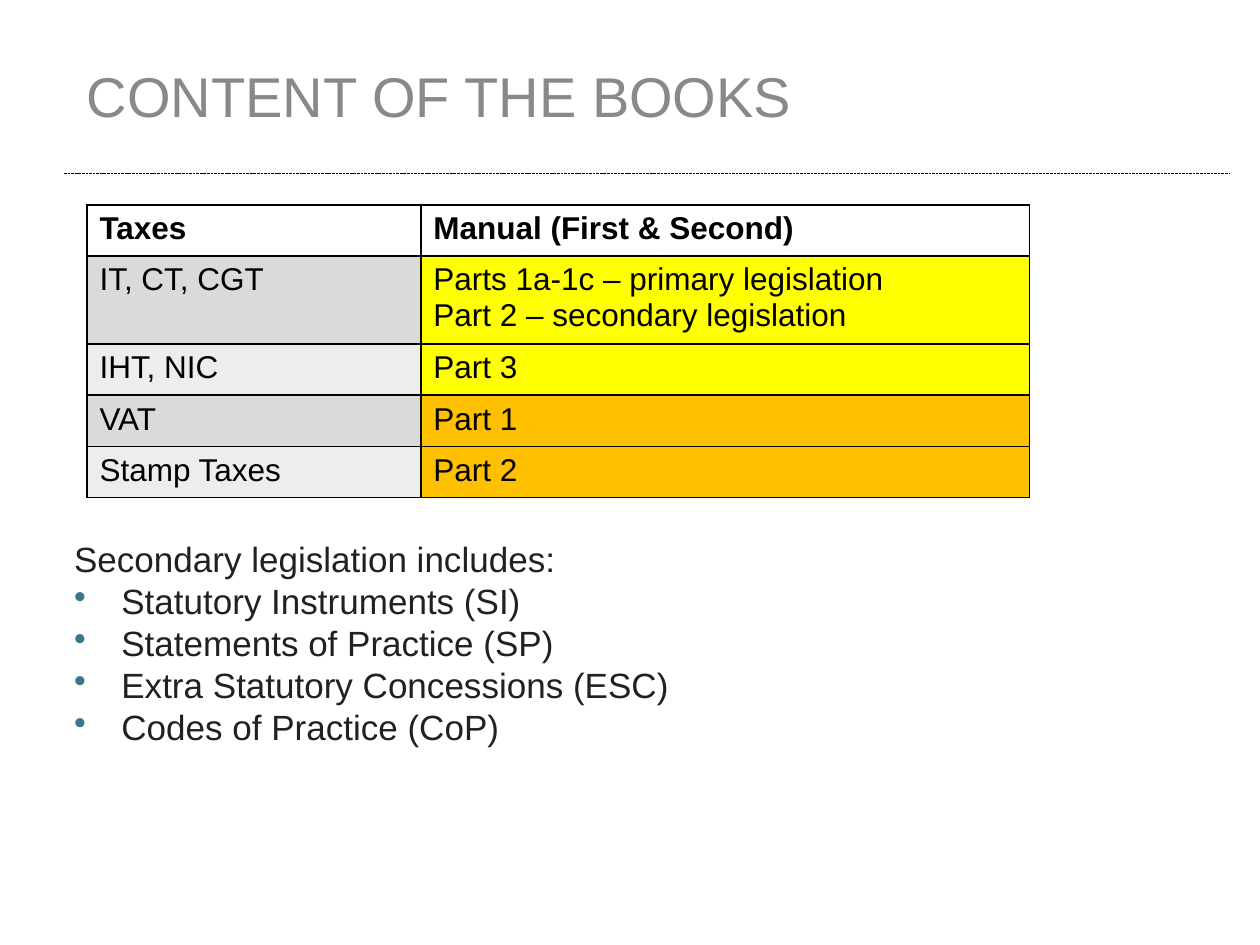
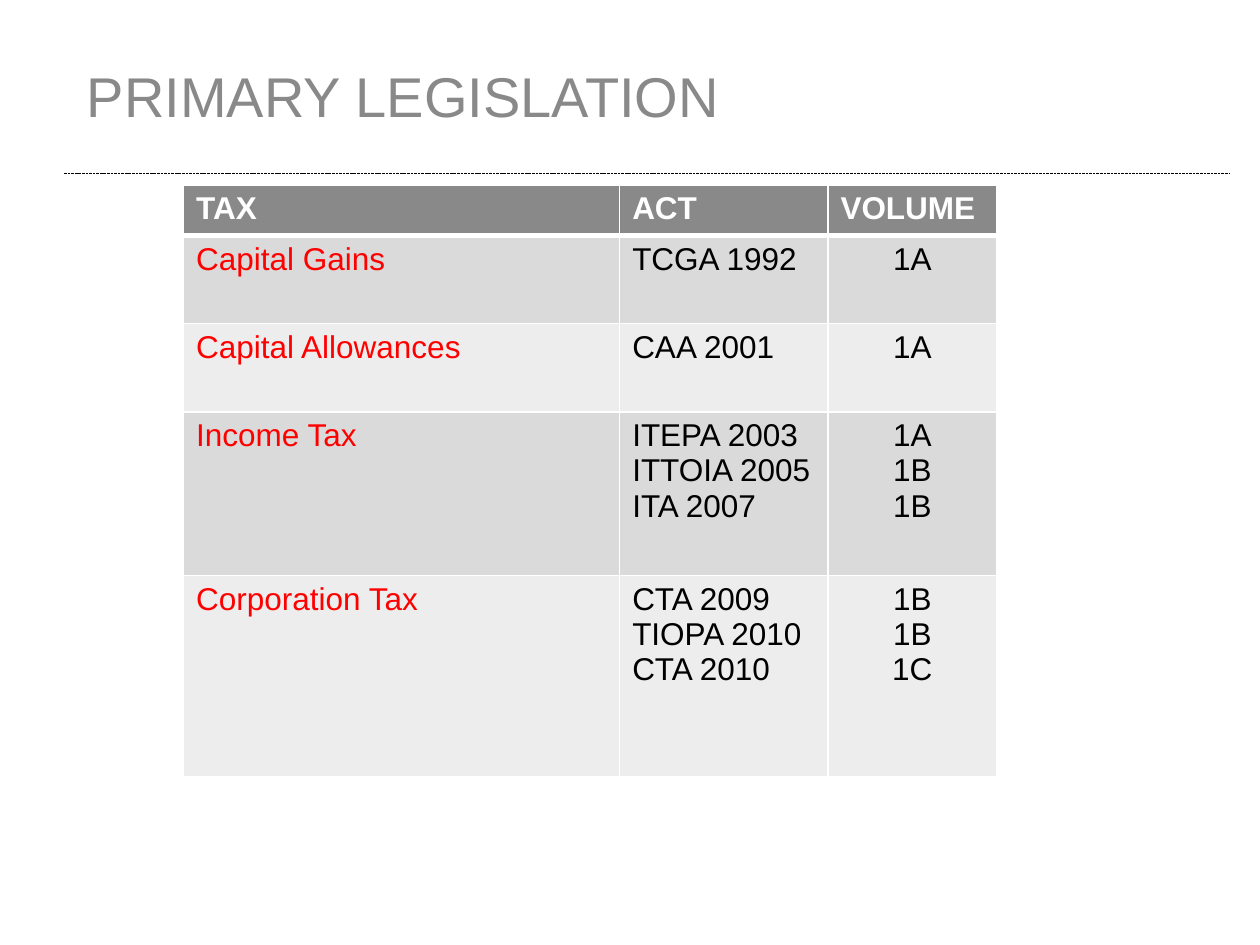
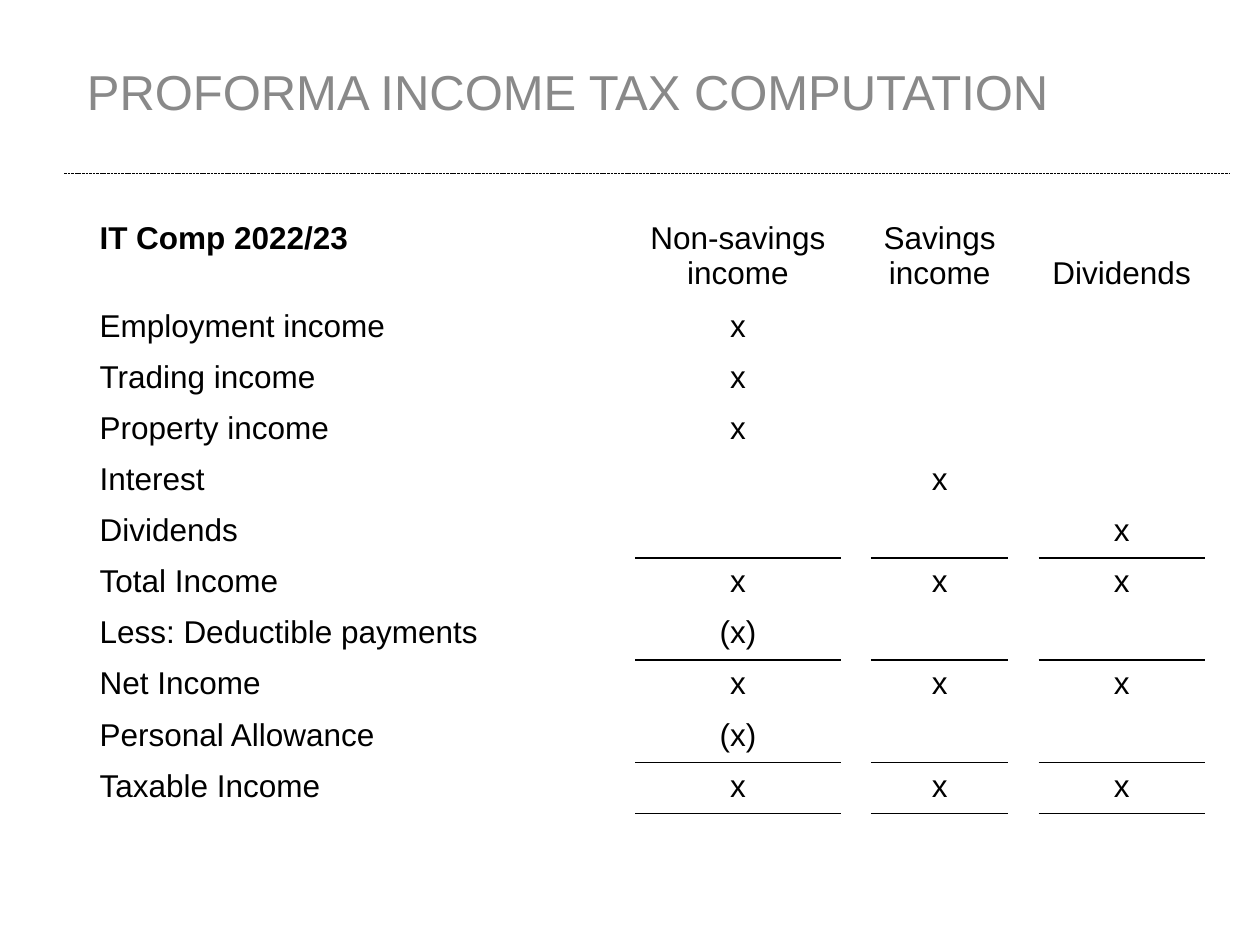
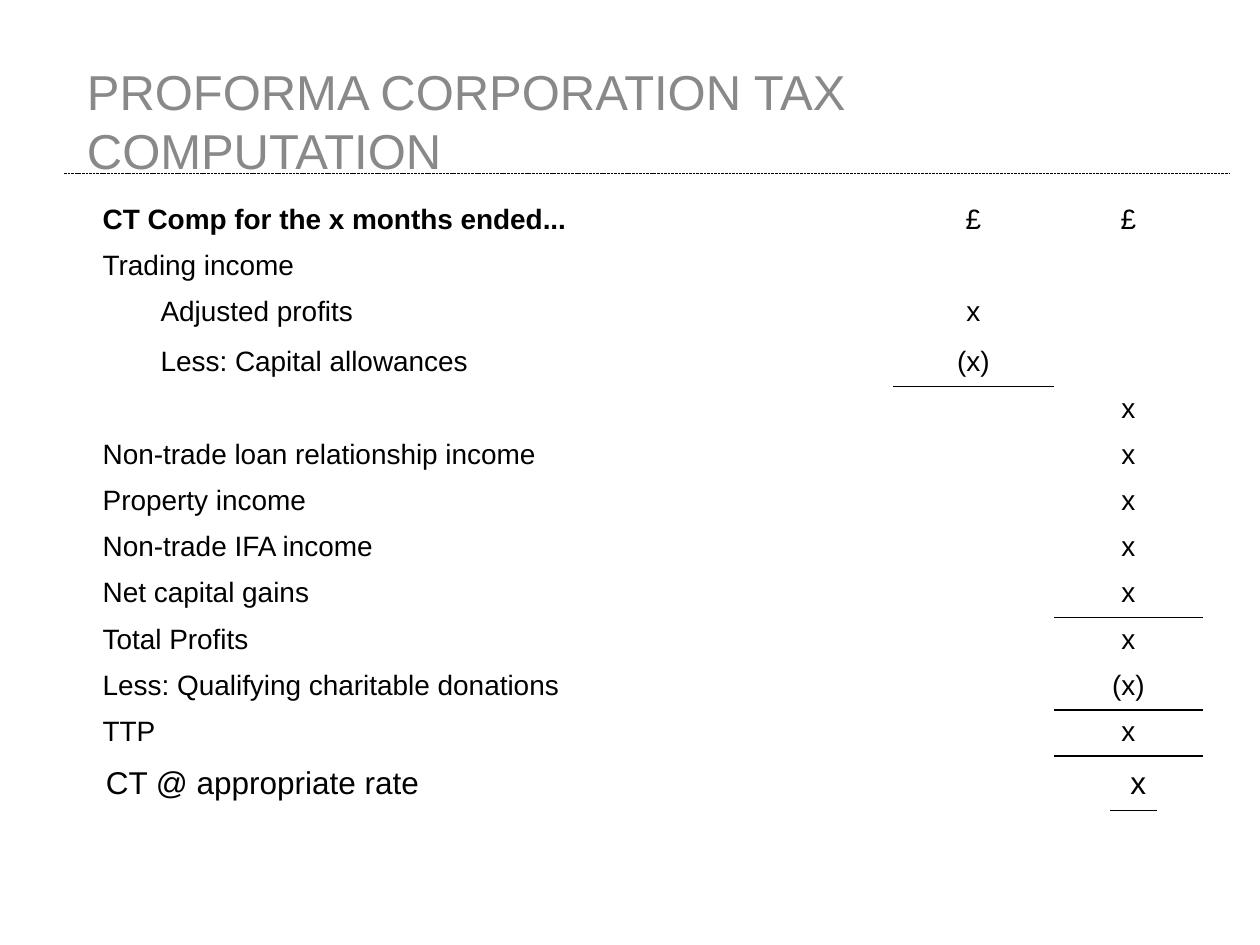
"""Build four slides on tax legislation and proforma tax computations."""
import dataclasses

import lxml.etree
import pptx
import pptx.dml.color
import pptx.enum.dml
import pptx.enum.shapes
import pptx.enum.text
import pptx.oxml.ns
import pptx.util

Pt = pptx.util.Pt
CENTER = pptx.enum.text.PP_ALIGN.CENTER
BOTTOM = pptx.enum.text.MSO_ANCHOR.BOTTOM
PLAIN_TABLE = "{2D5ABB26-0587-4C30-8999-92F81FD0307C}"


@dataclasses.dataclass(frozen=True)
class Theme:
    font: str = "Arial"
    black: str = "000000"
    white: str = "FFFFFF"
    gray: str = "898989"
    bands: tuple = ("EDEDED", "DADADA")
    yellow: str = "FFFF00"
    orange: str = "FFC000"
    red: str = "FF0000"
    ink: str = "202124"
    bullet: str = "3A7689"
    title: int = 32
    long_title: int = 28
    body: int = 20
    table: int = 18
    small_table: int = 16


THEME = Theme()

BOOKS = [
    ("Taxes", "Manual (First & Second)"),
    ("IT, CT, CGT", "Parts 1a-1c – primary legislation\nPart 2 – secondary legislation"),
    ("IHT, NIC", "Part 3"),
    ("VAT", "Part 1"),
    ("Stamp Taxes", "Part 2"),
]
SECONDARY = [
    "Secondary legislation includes:",
    "Statutory Instruments (SI)",
    "Statements of Practice (SP)",
    "Extra Statutory Concessions (ESC)",
    "Codes of Practice (CoP)",
]
ACTS = [
    ("TAX", "ACT", "VOLUME"),
    ("Capital Gains", "TCGA 1992", "1A"),
    ("Capital Allowances", "CAA 2001", "1A"),
    ("Income Tax", "ITEPA 2003\nITTOIA 2005\nITA 2007", "1A\n1B\n1B"),
    ("Corporation Tax", "CTA 2009\nTIOPA 2010\nCTA 2010", "1B\n1B\n1C"),
]
INCOME_TAX = [
    ("IT Comp 2022/23", "Non-savings income", "", "Savings income", "", "Dividends"),
    ("Employment income", "x", "", "", "", ""),
    ("Trading income", "x", "", "", "", ""),
    ("Property income", "x", "", "", "", ""),
    ("Interest", "", "", "x", "", ""),
    ("Dividends", "", "", "", "", "x"),
    ("Total Income", "x", "", "x", "", "x"),
    ("Less: Deductible payments", "(x)", "", "", "", ""),
    ("Net Income", "x", "", "x", "", "x"),
    ("Personal Allowance", "(x)", "", "", "", ""),
    ("Taxable Income", "x", "", "x", "", "x"),
]
INCOME_TAX_RULES = {(row, column) for row in (5, 7, 9, 10) for column in (1, 3, 5)}
CORPORATION_TAX = [
    ("CT Comp for the x months ended...", "", "£", "£"),
    ("Trading income", "", "", ""),
    ("", "Adjusted profits", "x", ""),
    ("", "Less: Capital allowances", "(x)", ""),
    ("", "", "", "x"),
    ("Non-trade loan relationship income", "", "", "x"),
    ("Property income", "", "", "x"),
    ("Non-trade IFA income", "", "", "x"),
    ("Net capital gains", "", "", "x"),
    ("Total Profits", "", "", "x"),
    ("Less: Qualifying charitable donations", "", "", "(x)"),
    ("TTP", "", "", "x"),
]
CORPORATION_TAX_RULES = {(3, 2), (8, 3), (10, 3), (11, 3)}
CHARGE = [("CT @ appropriate rate", "x")]


def rgb(color):
    return pptx.dml.color.RGBColor.from_string(color)


def add_bullet(para):
    properties = para._p.get_or_add_pPr()
    properties.set("marL", str(Pt(27)))
    properties.set("indent", str(-Pt(27)))
    color = lxml.etree.SubElement(properties, pptx.oxml.ns.qn("a:buClr"))
    lxml.etree.SubElement(color, pptx.oxml.ns.qn("a:srgbClr"), val=THEME.bullet)
    lxml.etree.SubElement(properties, pptx.oxml.ns.qn("a:buChar"), char="•")


def write(frame, text, size=THEME.table, color=THEME.black, bold=False, align=None,
          bullets_from=None):
    for index, line in enumerate(text.split("\n")):
        para = frame.paragraphs[0] if index == 0 else frame.add_paragraph()
        if bullets_from is not None and index >= bullets_from:
            add_bullet(para)
        if align is not None:
            para.alignment = align
        span = para.add_run()
        span.text = line
        span.font.name = THEME.font
        span.font.size = Pt(size)
        span.font.bold = bold
        span.font.color.rgb = rgb(color)


def set_insets(target, side, upright):
    target.margin_left = target.margin_right = Pt(side)
    target.margin_top = target.margin_bottom = Pt(upright)


def add_page(deck, title, size=THEME.title):
    page = deck.slides.add_slide(deck.slide_layouts[5])
    rule = page.shapes.add_connector(
        pptx.enum.shapes.MSO_CONNECTOR.STRAIGHT, Pt(36.7), Pt(99.4), Pt(702.7), Pt(99.4))
    rule.line.color.rgb = rgb(THEME.black)
    rule.line.width = Pt(0.5)
    rule.line.dash_style = pptx.enum.dml.MSO_LINE.SQUARE_DOT
    lxml.etree.SubElement(rule._element.spPr, pptx.oxml.ns.qn("a:effectLst"))
    box = page.shapes.title
    box.left, box.top, box.width, box.height = Pt(49.7), Pt(35.3), Pt(638), Pt(63)
    frame = box.text_frame
    set_insets(frame, 0, 0)
    frame.word_wrap = True
    frame.auto_size = pptx.enum.text.MSO_AUTO_SIZE.NONE
    frame.vertical_anchor = pptx.enum.text.MSO_ANCHOR.TOP
    write(frame, title, size=size, color=THEME.gray, align=pptx.enum.text.PP_ALIGN.LEFT)
    return page


def set_edges(cell, edges):
    properties = cell._tc.get_or_add_tcPr()
    for side in "LRTB":
        line = lxml.etree.SubElement(properties, pptx.oxml.ns.qn("a:ln" + side))
        if side in edges:
            color, width = edges[side]
            line.set("w", str(Pt(width)))
            fill = lxml.etree.SubElement(line, pptx.oxml.ns.qn("a:solidFill"))
            lxml.etree.SubElement(fill, pptx.oxml.ns.qn("a:srgbClr"), val=color)
        else:
            lxml.etree.SubElement(line, pptx.oxml.ns.qn("a:noFill"))


def add_table(page, content, left, top, widths, heights, look, inset=7.2):
    shape = page.shapes.add_table(len(content), len(widths), Pt(left), Pt(top),
                                  Pt(sum(widths)), Pt(sum(heights)))
    table = shape.table
    table.first_row = table.horz_banding = False
    table._tbl.tblPr.find(pptx.oxml.ns.qn("a:tableStyleId")).text = PLAIN_TABLE
    for column, width in zip(table.columns, widths):
        column.width = Pt(width)
    for row, height in zip(table.rows, heights):
        row.height = Pt(height)
    for row, texts in enumerate(content):
        for column, text in enumerate(texts):
            cell = table.cell(row, column)
            edges, fill, style = look(row, column)
            set_edges(cell, edges)
            if fill:
                cell.fill.solid()
                cell.fill.fore_color.rgb = rgb(fill)
            else:
                cell.fill.background()
            set_insets(cell, inset, 3.6 if text else 0)
            if text:
                write(cell.text_frame, text, **style)
    return table


def books_look(row, column):
    edges = dict.fromkeys("LRTB", (THEME.black, 1))
    if row == 0:
        return edges, None, {"bold": True}
    book = THEME.yellow if row < 3 else THEME.orange
    return edges, book if column else THEME.bands[row % 2], {}


def acts_look(row, column):
    edges = dict.fromkeys("LRTB", (THEME.white, 1))
    if row < 2:
        edges["B" if row == 0 else "T"] = (THEME.white, 3)
    if row == 0:
        return edges, THEME.gray, {"bold": True, "color": THEME.white}
    style = {"color": THEME.black if column else THEME.red,
             "align": CENTER if column == 2 else None}
    return edges, THEME.bands[row % 2], style


def proforma_look(rules, labels=1, size=THEME.table, heading=True):
    def look(row, column):
        edges = {}
        if (row - 1, column) in rules:
            edges["T"] = (THEME.black, 1)
        if (row, column) in rules:
            edges["B"] = (THEME.black, 1)
        style = {"size": size, "bold": heading and row == column == 0,
                 "align": CENTER if column >= labels else None}
        return edges, None, style
    return look


def add_books(deck):
    page = add_page(deck, "CONTENT OF THE BOOKS")
    add_table(page, BOOKS, 49.7, 117, [190.8, 347.8], [29.2, 50.4] + [29.2] * 3, books_look)
    box = page.shapes.add_textbox(Pt(35.3), Pt(303.8), Pt(652.3), Pt(157.7))
    box.text_frame.word_wrap = True
    write(box.text_frame, "\n".join(SECONDARY), size=THEME.body, color=THEME.ink,
          bullets_from=1)


def add_acts(deck):
    page = add_page(deck, "PRIMARY LEGISLATION")
    add_table(page, ACTS, 104.9, 105.7, [249.2, 119, 96.5], [28.8, 50.4, 50.4, 93.6, 115.2],
              acts_look)


def add_income_tax(deck):
    page = add_page(deck, "PROFORMA INCOME TAX COMPUTATION", THEME.long_title)
    table = add_table(page, INCOME_TAX, 49.7, 122.4, [313.2, 117.6, 16.3, 78.5, 16.3, 95],
                      [50.4] + [29.2] * 10, proforma_look(INCOME_TAX_RULES))
    dividends = table.cell(0, 5)
    dividends.vertical_anchor = BOTTOM
    dividends.margin_bottom = Pt(6.5)


def add_corporation_tax(deck):
    page = add_page(deck, "PROFORMA CORPORATION TAX COMPUTATION", THEME.long_title)
    heights = [26.4] * len(CORPORATION_TAX)
    heights[2] = 28.8
    table = add_table(page, CORPORATION_TAX, 49.7, 113, [33.1, 427.4, 92.2, 85], heights,
                      proforma_look(CORPORATION_TAX_RULES, 2, THEME.small_table), inset=9)
    for row, texts in enumerate(CORPORATION_TAX):
        if texts[0]:
            table.cell(row, 0).merge(table.cell(row, 1))
    add_table(page, CHARGE, 49, 434.2, [585.4, 26.6], [28.8],
              proforma_look({(0, 1)}, heading=False), inset=11.5)


def main():
    deck = pptx.Presentation()
    deck.slide_width, deck.slide_height = Pt(720), Pt(540)
    for add_content in (add_books, add_acts, add_income_tax, add_corporation_tax):
        add_content(deck)
    deck.save("out.pptx")


if __name__ == "__main__":
    main()
